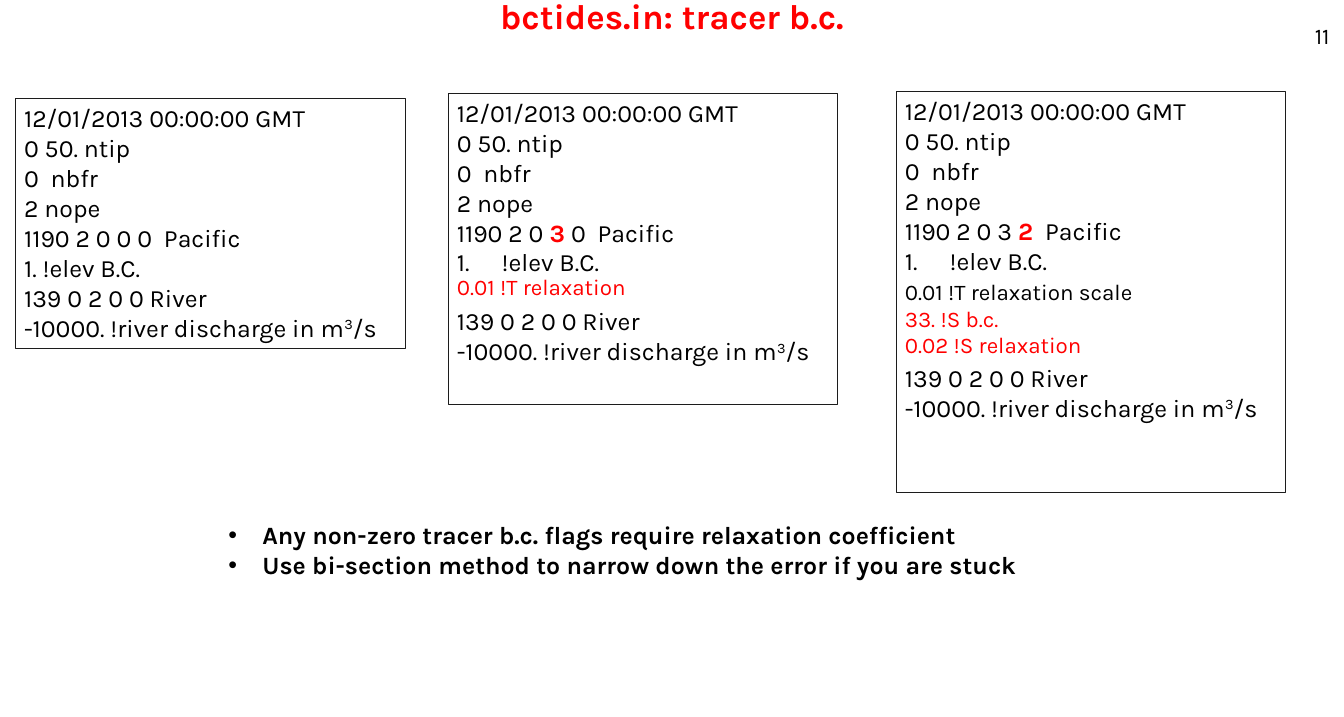
from lxml import etree
from pptx import Presentation
from pptx.dml.color import RGBColor
from pptx.enum.shapes import MSO_SHAPE
from pptx.enum.text import MSO_ANCHOR, PP_ALIGN
from pptx.oxml.ns import qn
from pptx.util import Inches, Pt

RECTANGLE = MSO_SHAPE.RECTANGLE
TOP, BOTTOM = MSO_ANCHOR.TOP, MSO_ANCHOR.BOTTOM
LEFT, CENTER, RIGHT = PP_ALIGN.LEFT, PP_ALIGN.CENTER, PP_ALIGN.RIGHT

FONT = "Karla"
COLORS = {"text": "000000", "accent": "FF0000", "border": "1C1C1C"}
LINE_PITCH = 23.4  # points per 20 pt line

# Lines shared by the parameter files
HEADER = ["12/01/2013 00:00:00 GMT", "0 50. ntip", "0  nbfr", "2 nope"]
RIVER = "139 0 2 0 0 River"
DISCHARGE = [("-10000. !river discharge in m", ""), ("3", "super"), ("/s", "")]


def color(name):
    return RGBColor.from_string(COLORS[name])


def format_span(span, size, color_name="text", bold=False):
    span.font.name = FONT
    span.font.size = Pt(size)
    span.font.bold = bold
    span.font.color.rgb = color(color_name)


def add_spans(para, line, size):
    """Write a string, or a list of (text, style) pairs, into a paragraph."""
    pairs = [(line, "")] if isinstance(line, str) else line
    for text, style in pairs:
        span = para.add_run()
        span.text = text
        if style == "flag":
            format_span(span, size, "accent", bold=True)
        else:
            format_span(span, size, "accent" if style == "accent" else "text")
        if style == "super":
            span.font._element.set("baseline", "30000")


def set_list(para, indent, numbered=False):
    """Give a paragraph a hanging indent and a bullet or number."""
    props = para._p.get_or_add_pPr()
    props.set("marL", str(Inches(indent)))
    props.set("indent", str(-Inches(indent)))
    if numbered:
        etree.SubElement(props, qn("a:buAutoNum"), type="arabicPeriod")
    else:
        etree.SubElement(props, qn("a:buFont"), typeface="Arial")
        etree.SubElement(props, qn("a:buChar"), char="•")


def add_lines(frame, lines, size):
    for index, line in enumerate(lines):
        para = frame.add_paragraph() if index else frame.paragraphs[0]
        para.alignment = LEFT
        add_spans(para, line, size)


def add_text(slide, place, lines, size):
    box = slide.shapes.add_textbox(*map(Inches, place))
    box.text_frame.word_wrap = True
    add_lines(box.text_frame, lines, size)
    return box


def add_label(slide, place, text, size, align, color_name="text", bold=False):
    """Add a single line that sits at the bottom of its box."""
    box = slide.shapes.add_textbox(*map(Inches, place))
    frame = box.text_frame
    frame.word_wrap = True
    frame.vertical_anchor = BOTTOM
    frame.margin_left = frame.margin_right = Inches(0.13)
    frame.margin_top = frame.margin_bottom = Inches(0.07)
    frame.text = text
    para = frame.paragraphs[0]
    para.alignment = align
    format_span(para.runs[0], size, color_name, bold)


def add_file_box(slide, place, ocean, elevation, gap_lines=0):
    """Add a framed file listing, with room for extra lines before the river."""
    box = slide.shapes.add_shape(RECTANGLE, *map(Inches, place))
    box.shadow.inherit = False
    box.fill.background()
    box.line.color.rgb = color("border")
    box.line.width = Pt(0.75)
    frame = box.text_frame
    frame.word_wrap = True
    frame.vertical_anchor = TOP
    add_lines(frame, HEADER + [ocean, elevation, RIVER, DISCHARGE], 20)
    if gap_lines:
        elevation_para, river_para = frame.paragraphs[5:7]
        set_list(elevation_para, 0.5, numbered=True)
        river_para.space_before = Pt(gap_lines * LINE_PITCH)


def main():
    deck = Presentation()
    deck.slide_width, deck.slide_height = Inches(15), Inches(8)
    slide = deck.slides.add_slide(deck.slide_layouts[6])

    # Title and page number
    add_label(slide, (0, 0, 15, 0.48), "bctides.in: tracer b.c.", 28, CENTER,
              "accent", bold=True)
    add_label(slide, (13.97, 0.09, 1, 0.53), "11", 18, RIGHT)

    # Three versions of the file
    add_file_box(slide, (0.17, 1.1, 4.35, 2.79),
                 "1190 2 0 0 0  Pacific", "1. !elev B.C.")
    add_file_box(slide, (5, 1.04, 4.35, 3.47),
                 [("1190 2 0 ", ""), ("3", "flag"), (" 0  Pacific", "")],
                 "!elev B.C.", gap_lines=1)
    add_file_box(slide, (10, 1.02, 4.35, 4.48),
                 [("1190 2 0 3 ", ""), ("2", "flag"), ("  Pacific", "")],
                 "!elev B.C.", gap_lines=3)

    # Relaxation lines in the gaps
    add_text(slide, (5, 3, 2.92, 0.4), [[("0.01 !T relaxation", "accent")]], 18)
    add_text(slide, (10, 3.05, 2.92, 1.01),
             ["0.01 !T relaxation scale", [("33. !S b.c.", "accent")],
              [("0.02 !S relaxation", "accent")]], 18)

    # Advice
    advice = add_text(slide, (2.45, 5.75, 9.72, 0.77), [
        "Any non-zero tracer b.c. flags require relaxation coefficient",
        "Use bi-section method to narrow down the error if you are stuck"], 20)
    for para in advice.text_frame.paragraphs:
        set_list(para, 0.38)
        para.runs[0].font.bold = True

    deck.save("out.pptx")


if __name__ == "__main__":
    main()
